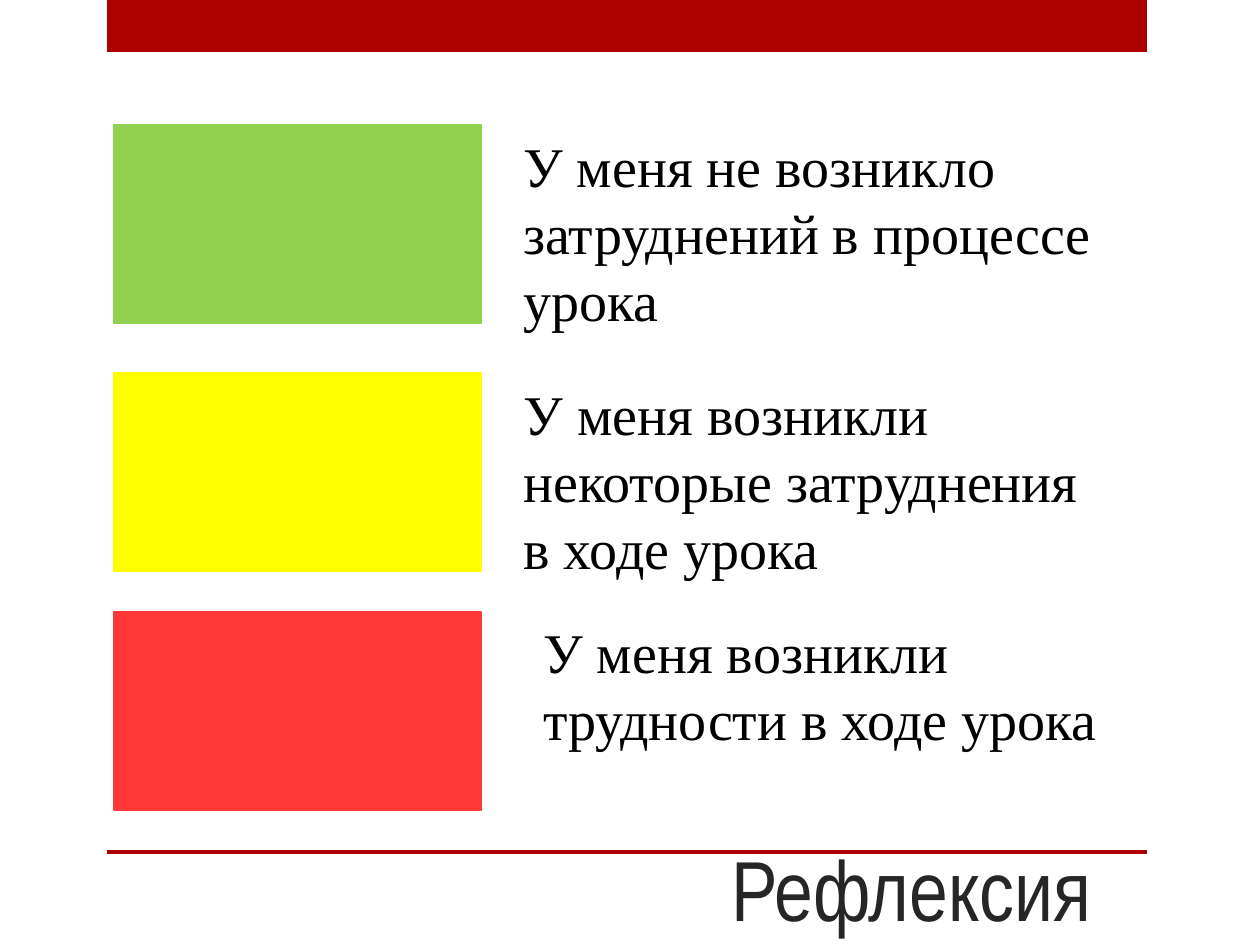
from dataclasses import dataclass

from pptx import Presentation
from pptx import util as u
from pptx.dml.color import RGBColor
from pptx.enum import shapes, text

PX = 914400 / 126
BLACK = RGBColor(0x00, 0x00, 0x00)
CHARCOAL = RGBColor(0x26, 0x26, 0x26)
DARK_RED = RGBColor(0xAD, 0x01, 0x01)
GREEN = RGBColor(0x92, 0xD0, 0x50)
YELLOW = RGBColor(0xFF, 0xFF, 0x00)
RED = RGBColor(0xFE, 0x37, 0x37)

TITLE_FONT = {"name": "Arial Narrow", "size": u.Pt(48.6), "bold": False}
ANSWER_FONT = {"name": "Times New Roman", "size": u.Pt(32)}


@dataclass(frozen=True)
class Box:
    x: int
    y: int
    w: int
    h: int

    def emu(self) -> list[int]:
        return [round(v * PX) for v in (self.x, self.y, self.w, self.h)]


@dataclass(frozen=True)
class Answer:
    color: RGBColor
    card_y: int
    box: Box
    wording: str


BANDS = [Box(107, 0, 1040, 52), Box(107, 850, 1040, 4)]
ANSWERS = [
    Answer(GREEN, 125, Box(511, 125, 665, 217),
           "У меня не возникло затруднений в процессе урока"),
    Answer(YELLOW, 373, Box(511, 373, 586, 217),
           "У меня возникли некоторые затруднения в ходе урока"),
    Answer(RED, 612, Box(531, 611, 615, 149),
           "У меня возникли трудности в ходе урока"),
]


def set_attrs(obj, values: dict) -> None:
    for name, value in values.items():
        setattr(obj, name, value)


def add_rect(s, box: Box, color: RGBColor, outlined: bool = False) -> None:
    sp = s.shapes.add_shape(shapes.MSO_SHAPE.RECTANGLE, *box.emu())
    sp.shadow.inherit = False
    sp.fill.solid()
    sp.fill.fore_color.rgb = color
    if outlined:
        sp.line.color.rgb = color
        sp.line.width = u.Pt(0.75)
    else:
        sp.line.fill.background()


def write(sp, wording: str, font: dict, color: RGBColor, frame: dict) -> None:
    tf = sp.text_frame
    set_attrs(tf, {"word_wrap": True, **frame})
    p = tf.paragraphs[0]
    p.alignment = text.PP_ALIGN.LEFT
    r = p.add_run()
    r.text = wording
    set_attrs(r.font, font)
    r.font.color.rgb = color


def add_answer(s, answer: Answer) -> None:
    add_rect(s, Box(114, answer.card_y, 367, 198), answer.color, outlined=True)
    sp = s.shapes.add_textbox(*answer.box.emu())
    write(sp, answer.wording, ANSWER_FONT, BLACK,
          {"auto_size": text.MSO_AUTO_SIZE.SHAPE_TO_FIT_TEXT})


def add_title(s, box: Box, wording: str) -> None:
    sp = s.shapes.title
    set_attrs(sp, dict(zip(("left", "top", "width", "height"), box.emu())))
    write(sp, wording, TITLE_FONT, CHARCOAL,
          {"auto_size": text.MSO_AUTO_SIZE.NONE,
           "vertical_anchor": text.MSO_ANCHOR.BOTTOM})


def main() -> None:
    prs = Presentation()
    set_attrs(prs, {"slide_width": u.Inches(10), "slide_height": u.Inches(7.5)})
    s = prs.slides.add_slide(prs.slide_layouts[5])
    for band in BANDS:
        add_rect(s, band, DARK_RED)
    add_title(s, Box(719, 774, 485, 171), "Рефлексия")
    for answer in ANSWERS:
        add_answer(s, answer)
    prs.save("out.pptx")


if __name__ == "__main__":
    main()
